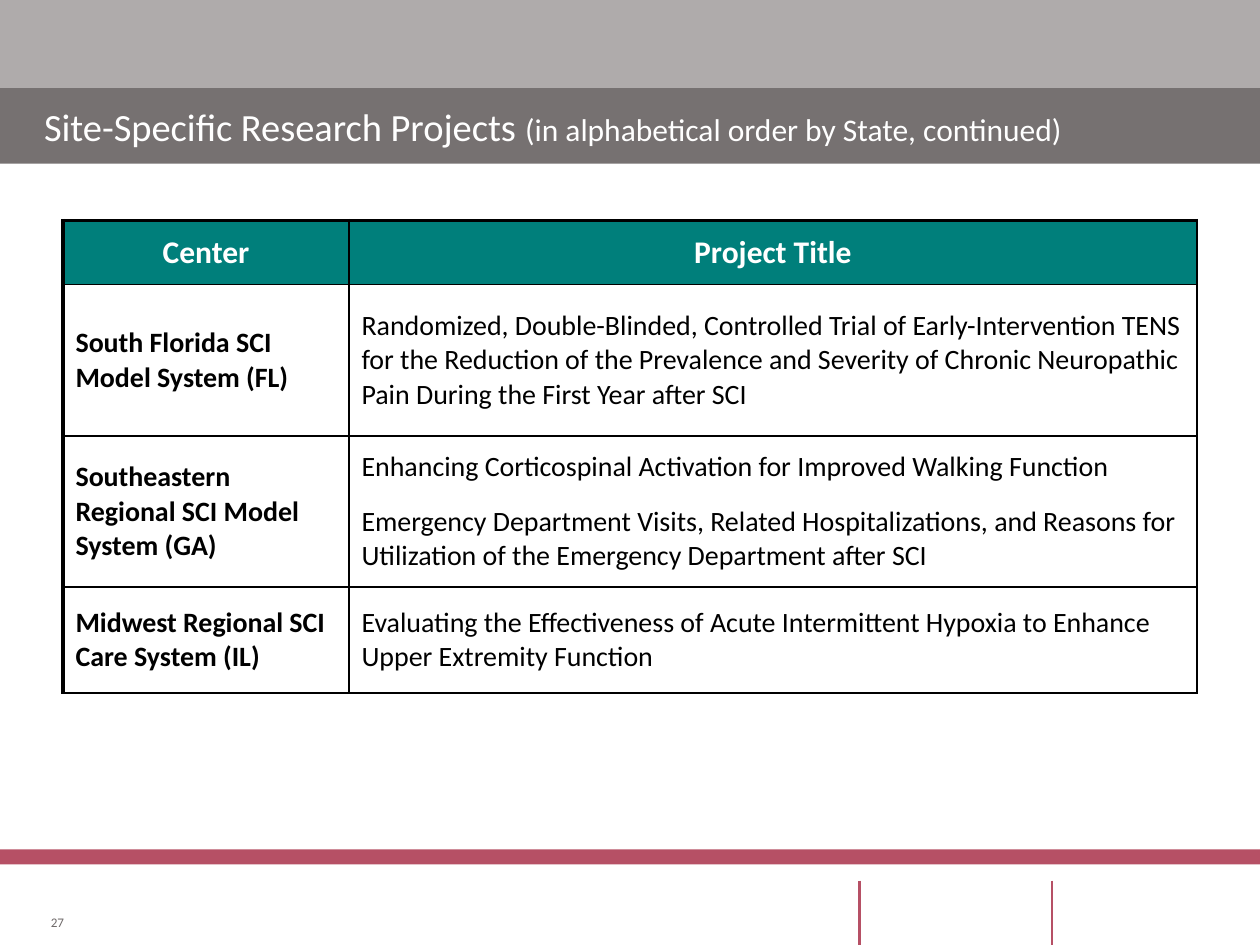
from lxml.etree import SubElement
from pptx import Presentation
from pptx.dml.color import RGBColor
from pptx.enum.shapes import MSO_CONNECTOR as Connector, MSO_SHAPE as Shape
from pptx.enum.text import MSO_ANCHOR as Anchor, PP_ALIGN as Align
from pptx.oxml.ns import qn
from pptx.util import Inches, Pt

FONT = "Calibri"
BLACK, WHITE, TEAL, ROSE = "000000", "FFFFFF", "007F7B", "B65065"
HEADINGS = ["Center", "Project Title"]
PROJECTS = [
    ("South Florida SCI Model System (FL)",
     ["Randomized, Double-Blinded, Controlled Trial of Early-Intervention TENS for the Reduction "
      "of the Prevalence and Severity of Chronic Neuropathic Pain During the First Year after SCI"]),
    ("Southeastern Regional SCI Model System (GA)",
     ["Enhancing Corticospinal Activation for Improved Walking Function",
      "Emergency Department Visits, Related Hospitalizations, and Reasons for Utilization "
      "of the Emergency Department after SCI"]),
    ("Midwest Regional SCI Care System (IL)",
     ["Evaluating the Effectiveness of Acute Intermittent Hypoxia to Enhance Upper Extremity Function"]),
]


def color(value):
    return RGBColor.from_string(value)


def add_run(paragraph, text, size, ink, bold=False):
    run = paragraph.add_run()
    run.text = text
    run.font.name = FONT
    run.font.size = Pt(size)
    run.font.bold = bold
    run.font.color.rgb = color(ink)


def add_band(slide, left, top, width, height, fill):
    band = slide.shapes.add_shape(Shape.RECTANGLE, Inches(left), Inches(top), Inches(width), Inches(height))
    band.shadow.inherit = False
    band.fill.solid()
    band.fill.fore_color.rgb = color(fill)
    band.line.fill.background()
    return band


def add_title(slide, left, top, width, height):
    title = add_band(slide, left, top, width, height, "767171").text_frame
    title.word_wrap = True
    title.vertical_anchor = Anchor.MIDDLE
    title.margin_left = title.margin_right = Inches(0.35)
    title.margin_top = title.margin_bottom = 0
    heading = title.paragraphs[0]
    heading.alignment = Align.LEFT
    add_run(heading, "Site-Specific Research Projects ", 22, WHITE)
    add_run(heading, "(in alphabetical order by State, continued)", 18, WHITE)


def set_borders(cell, widths):
    properties = cell._tc.get_or_add_tcPr()
    for index, (side, width) in enumerate(widths.items()):
        border = properties.makeelement(qn(f"a:ln{side}"), {"w": str(Pt(width))})
        SubElement(SubElement(border, qn("a:solidFill")), qn("a:srgbClr"), val=BLACK)
        properties.insert(index, border)


def fill_cell(cell, texts, size, ink, fill, bold, align):
    cell.fill.solid()
    cell.fill.fore_color.rgb = color(fill)
    cell.vertical_anchor = Anchor.MIDDLE
    for index, text in enumerate(texts):
        paragraph = cell.text_frame.add_paragraph() if index else cell.text_frame.paragraphs[0]
        paragraph.alignment = align
        if index:
            paragraph.space_before = Pt(12)
        add_run(paragraph, text, size, ink, bold)


def add_projects(slide, left, top, width, height):
    table = slide.shapes.add_table(
        len(PROJECTS) + 1, len(HEADINGS), Inches(left), Inches(top), Inches(width), Inches(height)).table
    for column, size in zip(table.columns, (2.27, width - 2.27)):
        column.width = Inches(size)
    for row, size in zip(table.rows, (0.51, 1.2, 1.2, 0.84)):
        row.height = Inches(size)
    for column, heading in enumerate(HEADINGS):
        fill_cell(table.cell(0, column), [heading], 18, WHITE, TEAL, True, Align.CENTER)
    for row, (center, titles) in enumerate(PROJECTS, 1):
        fill_cell(table.cell(row, 0), [center], 16, BLACK, WHITE, True, Align.LEFT)
        fill_cell(table.cell(row, 1), titles, 16, BLACK, WHITE, False, Align.LEFT)
    for row in range(len(table.rows)):
        for column in range(len(table.columns)):
            set_borders(table.cell(row, column), {
                "L": 1 if column else 2.25, "R": 1, "T": 1 if row else 2.25, "B": 1})


def add_footer(slide, left, top, width, height):
    add_band(slide, left, top, width, 0.12, ROSE)
    bottom = top + height
    for x in (left + 6.82, left + 8.35):
        divider = slide.shapes.add_connector(
            Connector.STRAIGHT, Inches(x), Inches(top + 0.25), Inches(x), Inches(bottom))
        divider.line.color.rgb = color(ROSE)
        divider.line.width = Pt(1.5)
        SubElement(divider._element.spPr, qn("a:effectLst"))
    number = slide.shapes.add_textbox(
        Inches(left + 0.38), Inches(bottom - 0.25), Inches(0.13), Inches(0.13)).text_frame
    number.word_wrap = False
    number.vertical_anchor = Anchor.BOTTOM
    number.margin_left = number.margin_right = number.margin_top = number.margin_bottom = 0
    number.paragraphs[0].alignment = Align.RIGHT
    add_run(number.paragraphs[0], "27", 7.5, "6F6A6A")


def main():
    deck = Presentation()
    deck.slide_width, deck.slide_height = Inches(10), Inches(7.5)
    slide = deck.slides.add_slide(deck.slide_layouts[6])
    add_band(slide, 0, 0, 10, 0.71, "AFABAB")
    add_title(slide, 0, 0.7, 10, 0.6)
    add_projects(slide, 0.5, 1.75, 9, 3.75)
    add_footer(slide, 0, 6.74, 10, 0.76)
    deck.save("out.pptx")


if __name__ == "__main__":
    main()
